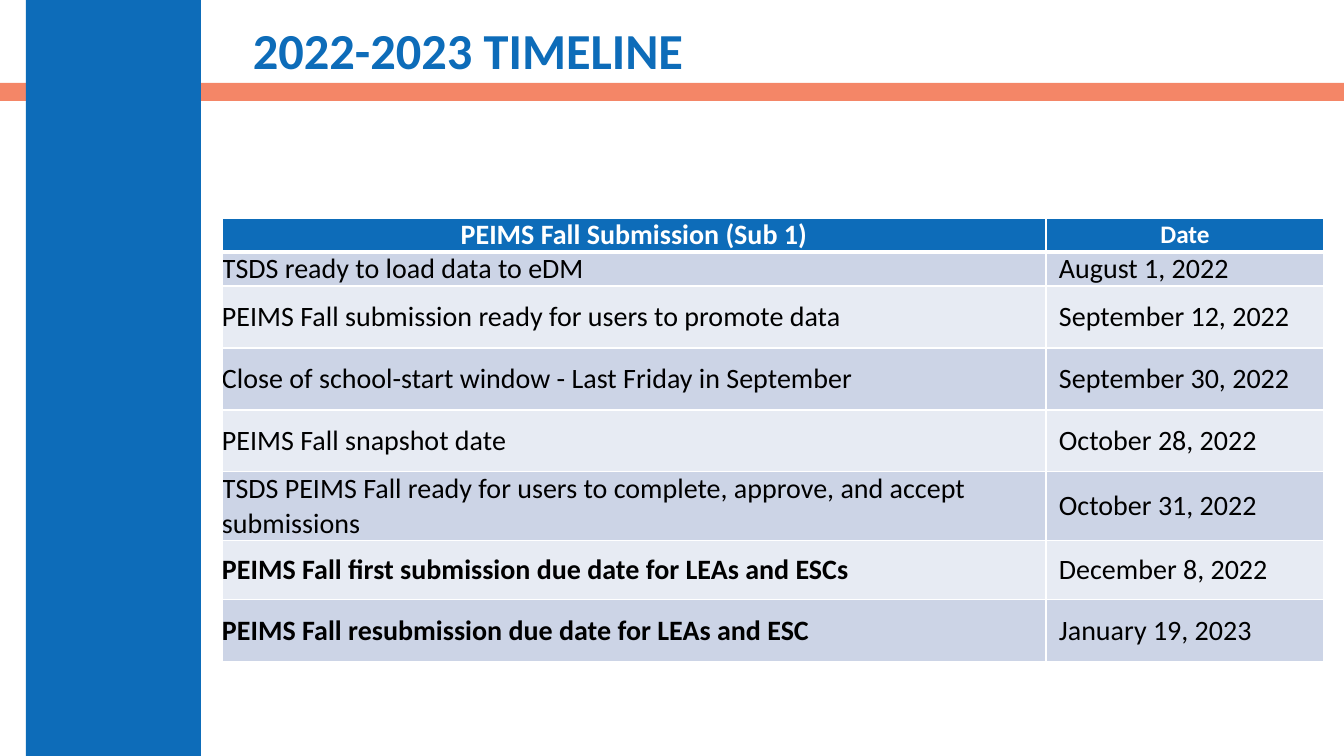
from dataclasses import dataclass

from lxml.etree import SubElement
from pptx import Presentation
from pptx.dml.color import RGBColor as Color
from pptx.enum.shapes import MSO_SHAPE as Shape
from pptx.enum.text import MSO_ANCHOR as Anchor, PP_ALIGN as Align
from pptx.oxml import parse_xml
from pptx.oxml.ns import nsdecls, qn
from pptx.util import Pt

EMU_PER_PX = 914400 / 100.8


@dataclass(frozen=True)
class Theme:
    """Colours, typeface and type sizes of the slide."""
    font: str = "Calibri"
    blue: str = "0D6CB9"
    coral: str = "F16038"
    white: str = "FFFFFF"
    black: str = "000000"
    bands: tuple = ("CCD4E6", "E7EBF3")
    title_size: int = 36
    body_size: int = 20
    date_header_size: int = 18


THEME = Theme()
COLUMN_WIDTHS = (824, 278)
ROW_HEIGHTS = (34, 34, 62, 62, 62, 69, 59, 62)
DATE_INDENT = 13
MILESTONES = (
    ("TSDS ready to load data to eDM", "August 1, 2022", False),
    ("PEIMS Fall submission ready for users to promote data", "September 12, 2022", False),
    ("Close of school-start window - Last Friday in September", "September 30, 2022", False),
    ("PEIMS Fall snapshot date", "October 28, 2022", False),
    ("TSDS PEIMS Fall ready for users to complete, approve, and accept submissions",
     "October 31, 2022", False),
    ("PEIMS Fall first submission due date for LEAs and ESCs", "December 8, 2022", True),
    ("PEIMS Fall resubmission due date for LEAs and ESC", "January 19, 2023", True),
)


def px(length):
    """Turn a length in px into EMU."""
    return round(length * EMU_PER_PX)


def write(frame, text, size=THEME.body_size, color=THEME.black, bold=False,
          align=Align.LEFT, spacing=None):
    """Write one formatted paragraph into a text frame."""
    frame.word_wrap = True
    para = frame.paragraphs[0]
    para.alignment = align
    para.line_spacing = spacing
    span = para.add_run()
    span.text = text
    span.font.name = THEME.font
    span.font.size = Pt(size)
    span.font.bold = bold
    span.font.color.rgb = Color.from_string(color)


def add_bar(page, left, top, width, height, color, opacity=100):
    """Draw a plain bar, optionally see-through."""
    bar = page.shapes.add_shape(Shape.RECTANGLE, px(left), px(top), px(width), px(height))
    bar.shadow.inherit = False
    bar.line.fill.background()
    bar.fill.solid()
    bar.fill.fore_color.rgb = Color.from_string(color)
    if opacity < 100:
        tint = bar.fill._xPr.find(qn("a:solidFill"))[0]
        SubElement(tint, qn("a:alpha"), val=str(opacity * 1000))


def add_title(page, text):
    """Place the slide title."""
    box = page.shapes.add_textbox(px(243), px(12), px(1061), px(83))
    box.text_frame.vertical_anchor = Anchor.MIDDLE
    write(box.text_frame, text, size=THEME.title_size, color=THEME.blue, bold=True, spacing=0.9)


def set_borders(cell, top=1, bottom=1):
    """Give a cell white borders, with widths in points."""
    properties = cell._tc.get_or_add_tcPr()
    widths = {"lnL": 1, "lnR": 1, "lnT": top, "lnB": bottom}
    for index, (side, width) in enumerate(widths.items()):
        properties.insert(index, parse_xml(
            f'<a:{side} {nsdecls("a")} w="{Pt(width)}"><a:solidFill>'
            f'<a:srgbClr val="{THEME.white}"/></a:solidFill></a:{side}>'))


def fill_cell(cell, text, fill, indent=0, top=1, bottom=1, **text_format):
    """Fill, frame and write one table cell."""
    cell.margin_left = px(indent)
    cell.margin_right = cell.margin_top = cell.margin_bottom = 0
    cell.vertical_anchor = Anchor.MIDDLE
    cell.fill.solid()
    cell.fill.fore_color.rgb = Color.from_string(fill)
    set_borders(cell, top, bottom)
    write(cell.text_frame, text, **text_format)


def add_timeline(page):
    """Build the table of milestones and dates."""
    table = page.shapes.add_table(
        len(ROW_HEIGHTS), len(COLUMN_WIDTHS), px(222), px(218),
        px(sum(COLUMN_WIDTHS)), px(sum(ROW_HEIGHTS))).table
    for column, width in zip(table.columns, COLUMN_WIDTHS):
        column.width = px(width)
    for row, height in zip(table.rows, ROW_HEIGHTS):
        row.height = px(height)

    headers = (("PEIMS Fall Submission (Sub 1)", THEME.body_size),
               ("Date", THEME.date_header_size))
    for column, (text, size) in enumerate(headers):
        fill_cell(table.cell(0, column), text, THEME.blue, bottom=3, size=size,
                  color=THEME.white, bold=True, align=Align.CENTER)
    for row, (milestone, date, bold) in enumerate(MILESTONES, start=1):
        band = THEME.bands[(row - 1) % 2]
        top = 3 if row == 1 else 1
        fill_cell(table.cell(row, 0), milestone, band, top=top, bold=bold)
        fill_cell(table.cell(row, 1), date, band, top=top, indent=DATE_INDENT)


def main():
    """Build and save the timeline slide."""
    deck = Presentation()
    deck.slide_width, deck.slide_height = px(1344), px(756)
    page = deck.slides.add_slide(deck.slide_layouts[6])
    add_bar(page, 0, 83, 1344, 18, THEME.coral, opacity=76)
    add_bar(page, 26, 0, 175, 756, THEME.blue)
    add_title(page, "2022-2023 TIMELINE")
    add_timeline(page)
    deck.save("out.pptx")


if __name__ == "__main__":
    main()
